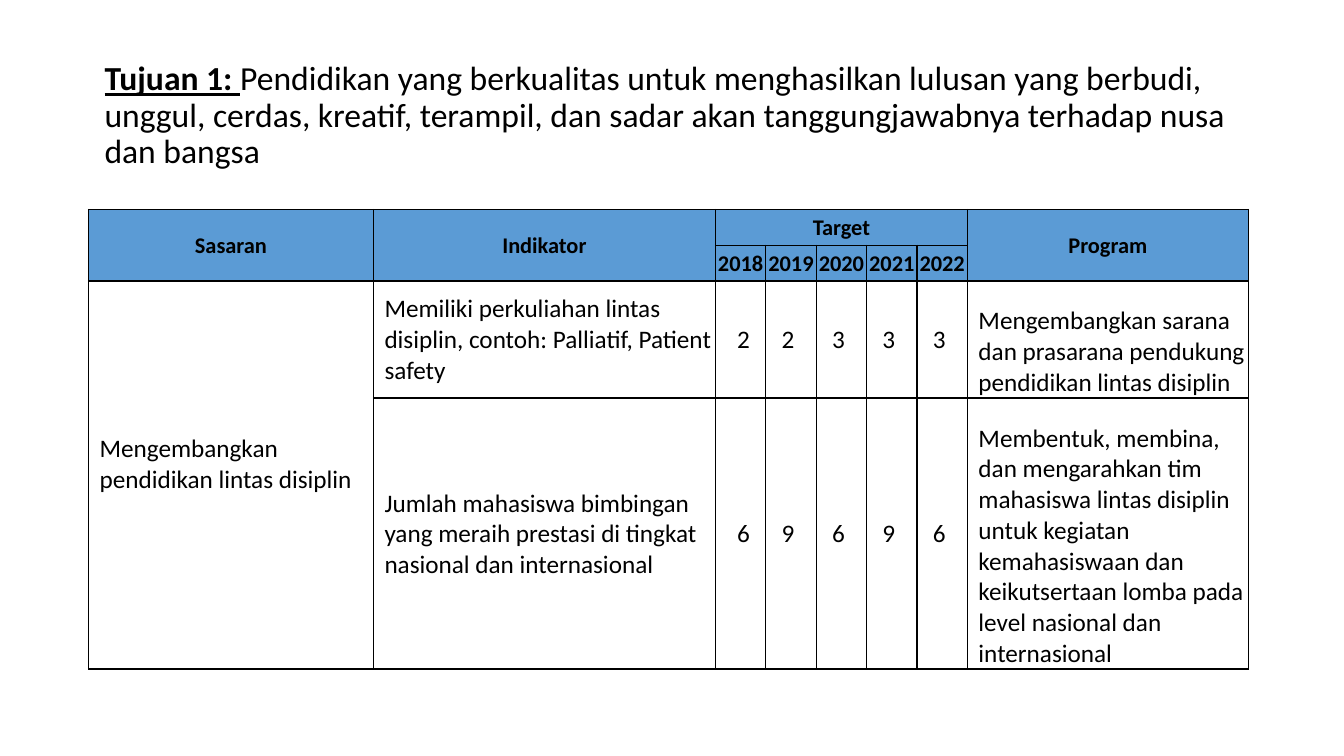
from lxml.etree import SubElement
from pptx import Presentation
from pptx.dml.color import RGBColor
from pptx.enum.text import MSO_ANCHOR, MSO_AUTO_SIZE, PP_ALIGN
from pptx.oxml.ns import qn
from pptx.util import Cm, Pt

BLACK = "000000"
HEADER_BLUE = "5B9BD5"
EDGE = 0.03
INDENT = 0.28
NUDGE = 0.15

COLUMN_WIDTHS = [7.18, 8.62] + [1.27] * 5 + [7.08]
ROW_HEIGHTS = [0.9, 0.9, 2.95, 6.83]
PROGRAM_COLUMN = len(COLUMN_WIDTHS) - 1
FIRST_YEAR_COLUMN = 2

YEARS = ["2018", "2019", "2020", "2021", "2022"]
GOAL = "Mengembangkan pendidikan lintas disiplin"
INDICATORS = [
    ("Memiliki perkuliahan lintas disiplin, contoh: Palliatif, Patient safety",
     [2, 2, 3, 3, 3],
     "Mengembangkan sarana dan prasarana pendukung pendidikan lintas disiplin"),
    ("Jumlah mahasiswa bimbingan yang meraih prestasi di tingkat nasional "
     "dan internasional",
     [6, 9, 6, 9, 6],
     "Membentuk, membina, dan mengarahkan tim mahasiswa lintas disiplin untuk "
     "kegiatan kemahasiswaan dan keikutsertaan lomba pada level nasional dan "
     "internasional"),
]


def color(hex_value):
    return RGBColor.from_string(hex_value)


def add_text(paragraph, text, size=18, bold=False, underline=False,
             align=PP_ALIGN.LEFT):
    paragraph.alignment = align
    run = paragraph.add_run()
    run.text = text
    run.font.name = "Calibri"
    run.font.size = Pt(size)
    run.font.bold = bold
    run.font.underline = underline
    run.font.color.rgb = color(BLACK)


def add_borders(cell):
    properties = cell._tc.get_or_add_tcPr()
    for side in ("a:lnL", "a:lnR", "a:lnT", "a:lnB"):
        line = SubElement(properties, qn(side), w=str(Pt(1)))
        fill = SubElement(line, qn("a:solidFill"))
        SubElement(fill, qn("a:srgbClr"), val=BLACK)


def fill_cell(cell, text, left=EDGE, right=EDGE, bottom=0,
              anchor=MSO_ANCHOR.MIDDLE, **text_format):
    cell.margin_left, cell.margin_right = Cm(left), Cm(right)
    cell.margin_top, cell.margin_bottom = Cm(EDGE), Cm(bottom)
    cell.vertical_anchor = anchor
    add_text(cell.text_frame.paragraphs[0], text, **text_format)


def add_title(slide):
    title = slide.shapes.title
    title.left, title.top = Cm(2.38), Cm(2.03)
    title.width, title.height = Cm(29.21), Cm(1.8)
    frame = title.text_frame
    frame.word_wrap = True
    frame.auto_size = MSO_AUTO_SIZE.NONE
    frame.vertical_anchor = MSO_ANCHOR.MIDDLE
    sentence = frame.paragraphs[0]
    sentence.line_spacing = 0.9
    add_text(sentence, "Tujuan 1: ", size=24, bold=True, underline=True)
    add_text(sentence, "Pendidikan yang berkualitas untuk menghasilkan lulusan "
             "yang berbudi, unggul, cerdas, kreatif, terampil, dan sadar akan "
             "tanggungjawabnya terhadap nusa dan bangsa", size=24)


def add_grid(slide):
    targets = slide.shapes.add_table(
        len(ROW_HEIGHTS), len(COLUMN_WIDTHS), Cm(2.23), Cm(5.28),
        Cm(sum(COLUMN_WIDTHS)), Cm(sum(ROW_HEIGHTS))).table
    targets.first_row = targets.horz_banding = False
    for column, width in zip(targets.columns, COLUMN_WIDTHS):
        column.width = Cm(width)
    for row, height in zip(targets.rows, ROW_HEIGHTS):
        row.height = Cm(height)
    for row_index, row in enumerate(targets.rows):
        for cell in row.cells:
            add_borders(cell)
            if row_index < 2:
                cell.fill.solid()
                cell.fill.fore_color.rgb = color(HEADER_BLUE)
            else:
                cell.fill.background()
    return targets


def fill_header(targets):
    heading = {"size": 16, "bold": True, "align": PP_ALIGN.CENTER}
    for column, label in ((0, "Sasaran"), (1, "Indikator"),
                          (PROGRAM_COLUMN, "Program")):
        targets.cell(0, column).merge(targets.cell(1, column))
        fill_cell(targets.cell(0, column), label, **heading)
    target = targets.cell(0, FIRST_YEAR_COLUMN)
    target.merge(targets.cell(0, PROGRAM_COLUMN - 1))
    fill_cell(target, "Target", **heading)
    for column, year in enumerate(YEARS, FIRST_YEAR_COLUMN):
        fill_cell(targets.cell(1, column), year, **heading)


def fill_body(targets):
    targets.cell(2, 0).merge(targets.cell(3, 0))
    fill_cell(targets.cell(2, 0), GOAL, left=INDENT, bottom=0.55)
    for row, (indicator, values, program) in enumerate(INDICATORS, 2):
        fill_cell(targets.cell(row, 1), indicator, left=INDENT)
        for column, value in enumerate(values, FIRST_YEAR_COLUMN):
            # The first year sits slightly right of centre, the others left
            side = "left" if column == FIRST_YEAR_COLUMN else "right"
            fill_cell(targets.cell(row, column), str(value),
                      align=PP_ALIGN.CENTER, **{side: EDGE + NUDGE})
        fill_cell(targets.cell(row, PROGRAM_COLUMN), program, left=INDENT,
                  anchor=MSO_ANCHOR.BOTTOM)


def main():
    deck = Presentation()
    deck.slide_width, deck.slide_height = Cm(33.87), Cm(19.05)
    slide = deck.slides.add_slide(deck.slide_layouts[5])

    # Goal statement
    add_title(slide)

    # Targets by year
    targets = add_grid(slide)
    fill_header(targets)
    fill_body(targets)

    deck.save("out.pptx")


if __name__ == "__main__":
    main()
